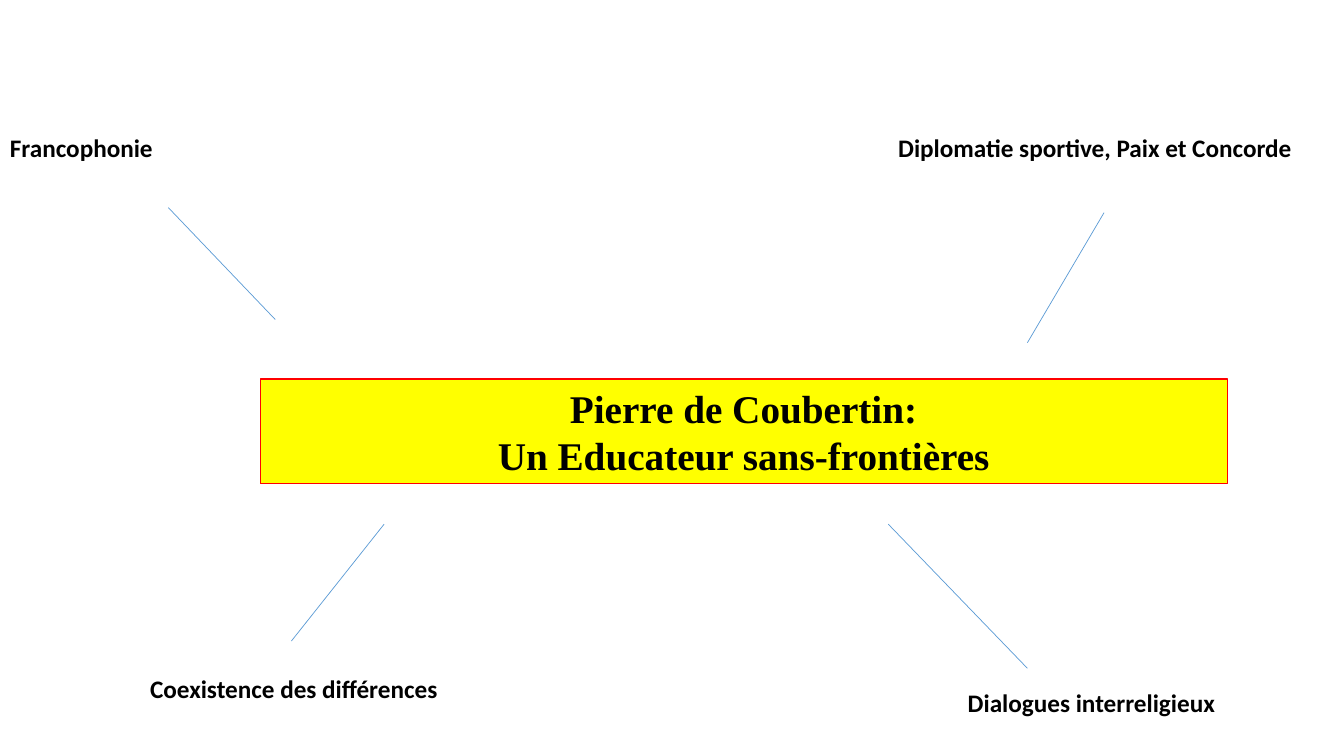
from lxml.etree import SubElement
from pptx import Presentation
from pptx.dml.color import RGBColor
from pptx.enum.shapes import MSO_CONNECTOR
from pptx.enum.text import MSO_ANCHOR, MSO_AUTO_SIZE, PP_ALIGN
from pptx.oxml.ns import qn
from pptx.util import Inches, Pt

BLACK = RGBColor(0x00, 0x00, 0x00)
YELLOW = RGBColor(0xFF, 0xFF, 0x00)
RED = RGBColor(0xFF, 0x00, 0x00)
BLUE = RGBColor(0x5B, 0x9B, 0xD5)

TITLE = "Pierre de Coubertin:\nUn Educateur sans-frontières"
TITLE_BOX = (2.58, 3.76, 9.59, 1.04)

# text, left, top, width, wrap
THEMES = [
    ("Francophonie", 0, 1.26, 1.76, True),
    ("Diplomatie sportive, Paix et Concorde", 8.81, 1.26, 4.53, True),
    ("Coexistence des différences", 1.39, 6.63, 3.08, False),
    ("Dialogues interreligieux", 9.5, 6.77, 2.67, False),
]
THEME_HEIGHT = 0.4

# start x, start y, end x, end y
LINKS = [
    (1.67, 2.06, 2.73, 3.17),
    (10.95, 2.11, 10.19, 3.4),
    (2.89, 6.36, 3.81, 5.2),
    (10.19, 6.63, 8.81, 5.2),
]


def inches(values):
    return [Inches(v) for v in values]


def style(frame, font_name, size, align):
    for para in frame.paragraphs:
        para.alignment = align
        for run in para.runs:
            font = run.font
            font.name, font.size, font.bold = font_name, Pt(size), True
            font.color.rgb = BLACK


def add_title(slide):
    title = slide.shapes.title
    title.left, title.top, title.width, title.height = inches(TITLE_BOX)
    title.fill.solid()
    title.fill.fore_color.rgb = YELLOW
    title.line.color.rgb = RED
    title.line.width = Pt(0.75)
    frame = title.text_frame
    frame.text = TITLE
    frame.word_wrap = True
    frame.auto_size = MSO_AUTO_SIZE.SHAPE_TO_FIT_TEXT
    frame.vertical_anchor = MSO_ANCHOR.TOP
    style(frame, "Times New Roman", 28, PP_ALIGN.CENTER)


def add_theme(slide, text, left, top, width, wrap):
    box = slide.shapes.add_textbox(*inches((left, top, width, THEME_HEIGHT)))
    frame = box.text_frame
    frame.text = text
    frame.word_wrap = wrap
    frame.auto_size = MSO_AUTO_SIZE.SHAPE_TO_FIT_TEXT
    style(frame, "Calibri", 18, PP_ALIGN.LEFT)


def add_link(slide, ends):
    link = slide.shapes.add_connector(MSO_CONNECTOR.STRAIGHT, *inches(ends))
    link.line.color.rgb = BLUE
    link.line.width = Pt(0.5)
    SubElement(link._element.spPr, qn("a:effectLst"))


def main():
    deck = Presentation()
    deck.slide_width, deck.slide_height = inches((13.33, 7.5))
    slide = deck.slides.add_slide(deck.slide_layouts[5])
    add_title(slide)
    for theme in THEMES:
        add_theme(slide, *theme)
    for ends in LINKS:
        add_link(slide, ends)
    deck.save("out.pptx")


if __name__ == "__main__":
    main()
